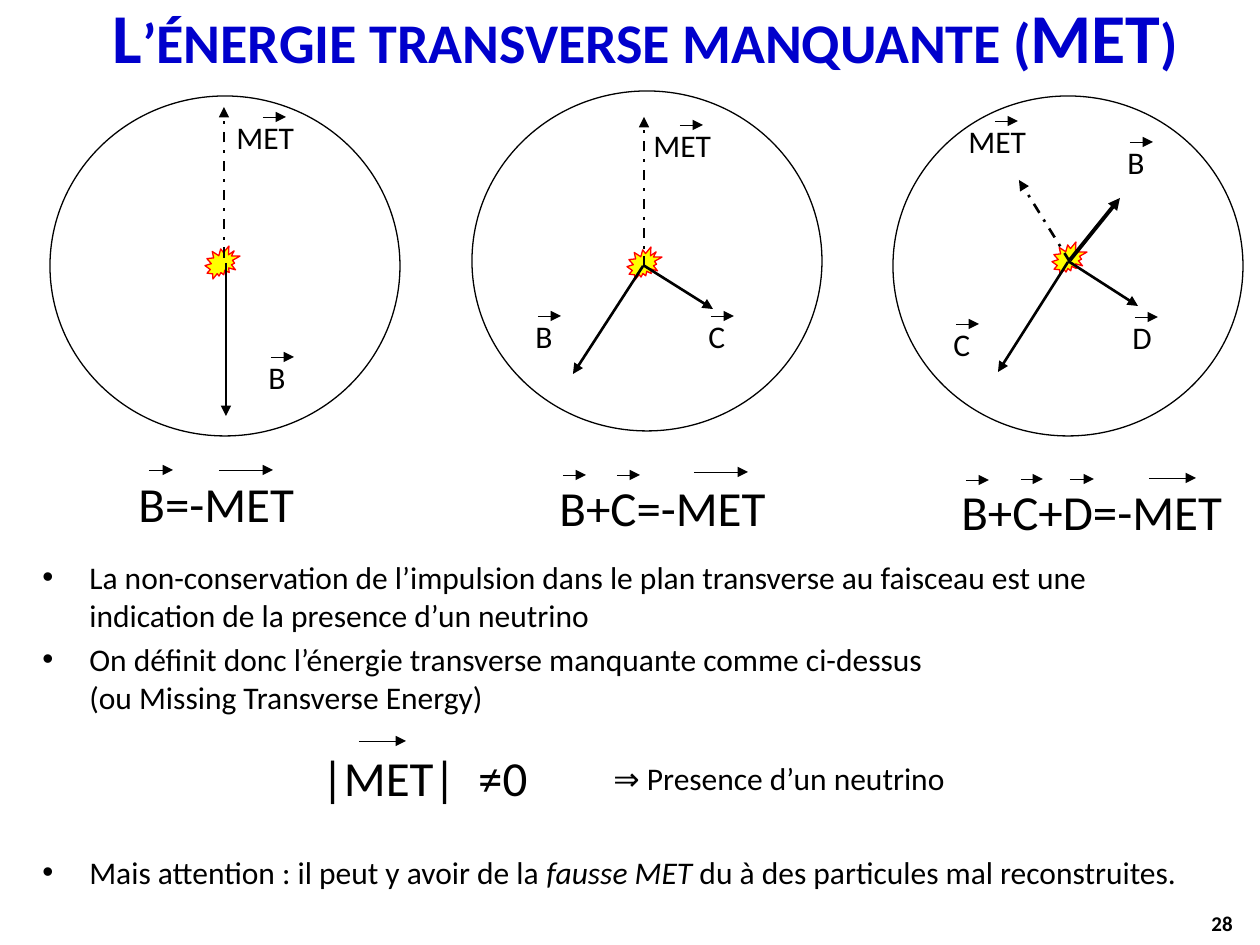
from dataclasses import dataclass

from lxml import etree
from pptx import Presentation
from pptx.dml.color import RGBColor
from pptx.enum import dml, shapes, text
from pptx.oxml import ns
from pptx.util import Emu, Pt

PX = 914400 / 126


@dataclass(frozen=True)
class Theme:
    font: str = "Calibri"
    ink: RGBColor = RGBColor(0, 0, 0)
    heading: RGBColor = RGBColor(0, 0, 0xCC)
    burst_fill: RGBColor = RGBColor(0xFF, 0xFF, 0)
    burst_edge: RGBColor = RGBColor(0xFF, 0, 0)
    title_size: int = 40
    equation_size: int = 28
    body_size: int = 18
    page_size: int = 12
    outline: float = 0.75
    track: float = 1.5
    strong_track: float = 2.25
    vector: float = 0.25


THEME = Theme()
SOLID, DASHED, STRONG = "solid", "dashed", "strong"

EVENTS = [
    {
        "circle": (50, 96),
        "burst": (205, 246),
        "tracks": [(226, 263, 226, 416, SOLID), (224, 258, 224, 107, DASHED)],
        "labels": [("MET", 224, 112), ("B", 256, 352)],
        "equation": ("B=-MET", 126, 467, 183),
        "vectors": [(149, 173, 470), (219, 273, 470)],
    },
    {
        "circle": (472, 91),
        "burst": (627, 247),
        "tracks": [(644, 267, 644, 117, DASHED), (643, 266, 573, 374, SOLID),
                   (643, 265, 713, 309, SOLID)],
        "labels": [("MET", 641, 120), ("B", 523, 311), ("C", 696, 311)],
        "equation": ("B+C=-MET", 547, 471, 234),
        "vectors": [(563, 586, 475), (617, 640, 475), (694, 748, 472)],
    },
    {
        "circle": (893, 96),
        "burst": (1052, 242),
        "tracks": [(1068, 262, 998, 372, SOLID), (1068, 261, 1138, 306, SOLID),
                   (1070, 262, 1019, 180, DASHED), (1070, 260, 1120, 198, STRONG)],
        "labels": [("MET", 956, 116), ("B", 1115, 137), ("C", 941, 319), ("D", 1120, 312)],
        "equation": ("B+C+D=-MET", 949, 475, 290),
        "vectors": [(966, 989, 480), (1021, 1043, 479), (1070, 1094, 479), (1149, 1196, 478)],
    },
]

BULLETS = [
    (["La non-conservation de l’impulsion dans le plan transverse au faisceau est une "
      "indication de la presence d’un neutrino"], 0),
    (["On définit donc l’énergie transverse manquante comme ci-dessus \v"
      "(ou Missing Transverse Energy)"], 3.6),
    (["Mais attention : il peut y avoir de la ", "fausse MET ",
      "du à des particules mal reconstruites."], 78.6),
]


def px(*lengths):
    return [Emu(round(length * PX)) for length in lengths]


def style(run, size, color=THEME.ink, bold=False):
    run.font.name = THEME.font
    run.font.size = Pt(size)
    run.font.color.rgb = color
    run.font.bold = bold


def add_text(slide, words, box, size, color=THEME.ink, bold=False, wrap=False,
             align=text.PP_ALIGN.LEFT, anchor=text.MSO_ANCHOR.TOP):
    frame = slide.shapes.add_textbox(*px(*box)).text_frame
    frame.word_wrap = wrap
    frame.vertical_anchor = anchor
    frame.text = words
    paragraph = frame.paragraphs[0]
    paragraph.alignment = align
    for run in paragraph.runs:
        style(run, size, color, bold)
    return paragraph


def add_arrow(slide, start_x, start_y, end_x, end_y, width, dashed=False):
    arrow = slide.shapes.add_connector(
        shapes.MSO_CONNECTOR.STRAIGHT, *px(start_x, start_y, end_x, end_y))
    arrow.line.color.rgb = THEME.ink
    arrow.line.width = Pt(width)
    if dashed:
        arrow.line.dash_style = dml.MSO_LINE.DASH_DOT
    properties = arrow._element.spPr
    head = etree.SubElement(properties.get_or_add_ln(), ns.qn("a:tailEnd"))
    head.set("type", "triangle")
    etree.SubElement(properties, ns.qn("a:effectLst"))


def add_outline(slide, preset, box, edge, fill=None):
    outline = slide.shapes.add_shape(preset, *px(*box))
    outline.shadow.inherit = False
    outline.line.color.rgb = edge
    outline.line.width = Pt(THEME.outline)
    if fill is None:
        outline.fill.background()
    else:
        outline.fill.solid()
        outline.fill.fore_color.rgb = fill


def add_label(slide, name, left, top):
    width, shift = (98, 39) if name == "MET" else (49, 15)
    add_text(slide, name, (left, top, width, 54), THEME.body_size)
    add_arrow(slide, left + shift, top + 5, left + shift + 23, top + 5, THEME.vector)


def add_equation(slide, words, left, top, width, vectors):
    add_text(slide, words, (left, top, width, 72), THEME.equation_size)
    for start, end, height in vectors:
        add_arrow(slide, start, height, end, height, THEME.vector)


def add_event(slide, event):
    add_outline(slide, shapes.MSO_SHAPE.EXPLOSION2, (*event["burst"], 35, 33),
                THEME.burst_edge, THEME.burst_fill)
    for *ends, kind in event["tracks"]:
        width = THEME.strong_track if kind == STRONG else THEME.track
        add_arrow(slide, *ends, width, kind == DASHED)
    for label in event["labels"]:
        add_label(slide, *label)
    add_equation(slide, *event["equation"], event["vectors"])
    add_outline(slide, shapes.MSO_SHAPE.OVAL, (*event["circle"], 350, 340), THEME.ink)


def add_bullets(slide, box):
    frame = slide.shapes.add_textbox(*px(*box)).text_frame
    frame.word_wrap = True
    for index, (parts, space) in enumerate(BULLETS):
        paragraph = frame.paragraphs[0] if index == 0 else frame.add_paragraph()
        paragraph.text = parts[0]
        for part in parts[1:]:
            paragraph.add_run().text = part
        paragraph.space_before = Pt(space)
        properties = paragraph._p.get_or_add_pPr()
        indent = px(47)[0]
        properties.set("marL", str(indent))
        properties.set("indent", str(-indent))
        etree.SubElement(properties, ns.qn("a:buFont")).set("typeface", "Arial")
        etree.SubElement(properties, ns.qn("a:buChar")).set("char", "•")
        for run in paragraph.runs:
            style(run, THEME.body_size)
            run.font.italic = run.text.startswith("fausse")


def main():
    deck = Presentation()
    deck.slide_width, deck.slide_height = px(1260, 945)
    slide = deck.slides.add_slide(deck.slide_layouts[6])

    title = add_text(slide, "L’énergie transverse manquante (MET)", (31, 0, 1229, 72),
                     THEME.title_size, THEME.heading, True, True,
                     text.PP_ALIGN.CENTER, text.MSO_ANCHOR.MIDDLE)
    title.runs[0].font._element.set("cap", "small")
    for event in EVENTS:
        add_event(slide, event)
    add_bullets(slide, (30, 552, 1187, 367))
    add_equation(slide, "|MET|  ≠0", 309, 741, 248, [(359, 406, 741)])
    add_text(slide, "⇒ Presence d’un neutrino", (601, 753, 475, 54), THEME.body_size)
    add_text(slide, "28", (951, 898, 294, 50), THEME.page_size, bold=True, wrap=True,
             align=text.PP_ALIGN.RIGHT, anchor=text.MSO_ANCHOR.MIDDLE)
    deck.save("out.pptx")


if __name__ == "__main__":
    main()
